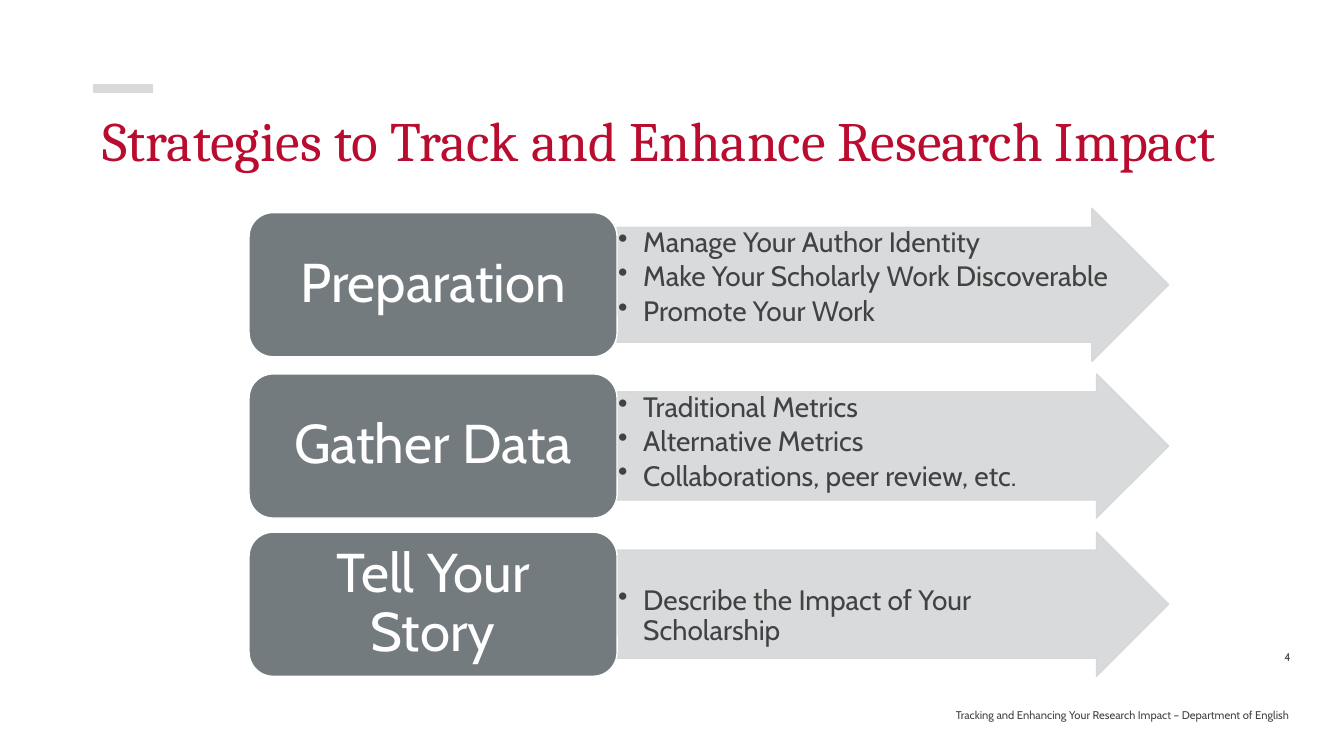
from lxml.etree import SubElement
from pptx import Presentation
from pptx.dml.color import RGBColor
from pptx.enum.shapes import MSO_CONNECTOR, MSO_SHAPE
from pptx.enum.text import MSO_ANCHOR, PP_ALIGN
from pptx.oxml.ns import qn
from pptx.util import Inches, Pt

RED = RGBColor(0xBA, 0x0C, 0x2F)
DARK = RGBColor(0x3F, 0x44, 0x43)
SLATE = RGBColor(0x73, 0x7B, 0x7E)
ARROW_GRAY = RGBColor(0xD5, 0xD7, 0xD8)
RULE_GRAY = RGBColor(0xD9, 0xD9, 0xD9)
WHITE = RGBColor(0xFF, 0xFF, 0xFF)

STAGE_LEFT, LABEL_WIDTH, ARROW_WIDTH, STAGE_HEIGHT = 2.47, 3.65, 5.47, 1.43

# Label, points, stage top, arrow height, space above the points
STAGES = [
    ("Preparation",
     ["Manage Your Author Identity", "Make Your Scholarly Work Discoverable",
      "Promote Your Work"], 2.11, 1.52, 0.01),
    ("Gather Data",
     ["Traditional Metrics", "Alternative Metrics",
      "Collaborations, peer review, etc."], 3.71, 1.43, 0.01),
    ("Tell Your Story",
     ["Describe the Impact of Your Scholarship"], 5.28, 1.43, 0.36),
]


def style_paragraph(para, font_name, size, color, align):
    para.alignment = align
    para.font.name = font_name
    para.font.size = Pt(size)
    para.font.color.rgb = color


def set_margins(frame, left, top, right, bottom):
    frame.margin_left, frame.margin_top = Inches(left), Inches(top)
    frame.margin_right, frame.margin_bottom = Inches(right), Inches(bottom)


def add_bullet(para):
    properties = para._p.get_or_add_pPr()
    properties.set("marL", str(Inches(0.25)))
    properties.set("indent", str(-Inches(0.25)))
    SubElement(properties, qn("a:buChar")).set("char", "•")


def add_filled_shape(page, kind, left, top, width, height, fill, line):
    shape = page.shapes.add_shape(
        kind, Inches(left), Inches(top), Inches(width), Inches(height))
    shape.shadow.inherit = False
    shape.fill.solid()
    shape.fill.fore_color.rgb = fill
    shape.line.color.rgb = line
    shape.line.width = Pt(1)
    shape.text_frame.word_wrap = True
    return shape


def add_heading(page, left, top, width, height):
    """Place the title with the short rule above it."""
    rule = page.shapes.add_connector(
        MSO_CONNECTOR.STRAIGHT, Inches(left), Inches(top - 0.2),
        Inches(left + 0.6), Inches(top - 0.2))
    rule.line.color.rgb = RULE_GRAY
    rule.line.width = Pt(6.25)
    SubElement(rule._element.spPr, qn("a:effectLst"))

    title = page.shapes.title
    title.left, title.top = Inches(left), Inches(top)
    title.width, title.height = Inches(width), Inches(height)
    frame = title.text_frame
    frame.text = "Strategies to Track and Enhance Research Impact"
    frame.vertical_anchor = MSO_ANCHOR.TOP
    para = frame.paragraphs[0]
    para.line_spacing = 0.9
    style_paragraph(para, "Cambria", 39.6, RED, PP_ALIGN.LEFT)


def add_points_arrow(page, points, left, top, width, height, space_above):
    arrow = add_filled_shape(page, MSO_SHAPE.RIGHT_ARROW, left, top, width,
                             height, ARROW_GRAY, ARROW_GRAY)
    arrow.adjustments[0] = 0.75
    arrow.adjustments[1] = 0.5
    for color in arrow._element.spPr.iter(qn("a:srgbClr")):
        SubElement(color, qn("a:alpha")).set("val", "90000")

    frame = arrow.text_frame
    frame.vertical_anchor = MSO_ANCHOR.TOP
    set_margins(frame, 0.01, space_above, 0.01, 0.01)
    frame.text = "\n".join(points)
    for para in frame.paragraphs:
        add_bullet(para)
        para.line_spacing = 0.9
        para.space_after = Pt(3)
        style_paragraph(para, "Cabin", 20, DARK, PP_ALIGN.LEFT)


def add_stage_label(page, label, left, top, width, height):
    box = add_filled_shape(page, MSO_SHAPE.ROUNDED_RECTANGLE, left, top,
                           width, height, SLATE, WHITE)
    frame = box.text_frame
    frame.vertical_anchor = MSO_ANCHOR.MIDDLE
    set_margins(frame, 0.16, 0.08, 0.16, 0.08)
    frame.text = label
    para = frame.paragraphs[0]
    para.line_spacing = 0.9
    style_paragraph(para, "Cabin", 39, WHITE, PP_ALIGN.CENTER)


def add_stage(page, label, points, left, top, arrow_height, space_above):
    """Place a label with its arrow centred beside it."""
    arrow_top = top + (STAGE_HEIGHT - arrow_height) / 2
    add_points_arrow(page, points, left + LABEL_WIDTH, arrow_top,
                     ARROW_WIDTH, arrow_height, space_above)
    add_stage_label(page, label, left, top, LABEL_WIDTH, STAGE_HEIGHT)


def add_small_print(page, text, left, top, width, height):
    box = page.shapes.add_textbox(
        Inches(left), Inches(top), Inches(width), Inches(height))
    frame = box.text_frame
    frame.word_wrap = True
    frame.vertical_anchor = MSO_ANCHOR.MIDDLE
    frame.text = text
    style_paragraph(frame.paragraphs[0], "Cabin", 8, DARK, PP_ALIGN.RIGHT)


def main():
    deck = Presentation()
    deck.slide_width, deck.slide_height = Inches(13.33), Inches(7.5)
    page = deck.slides.add_slide(deck.slide_layouts.get_by_name("Title Only"))
    add_heading(page, 0.92, 1.08, 11.5, 0.92)
    for label, points, top, arrow_height, space_above in STAGES:
        add_stage(page, label, points, STAGE_LEFT, top, arrow_height, space_above)
    add_small_print(page, "4", 12.36, 6.32, 0.54, 0.4)
    add_small_print(
        page, "Tracking and Enhancing Your Research Impact – Department of English",
        8.39, 6.89, 4.5, 0.4)
    deck.save("out.pptx")


if __name__ == "__main__":
    main()
